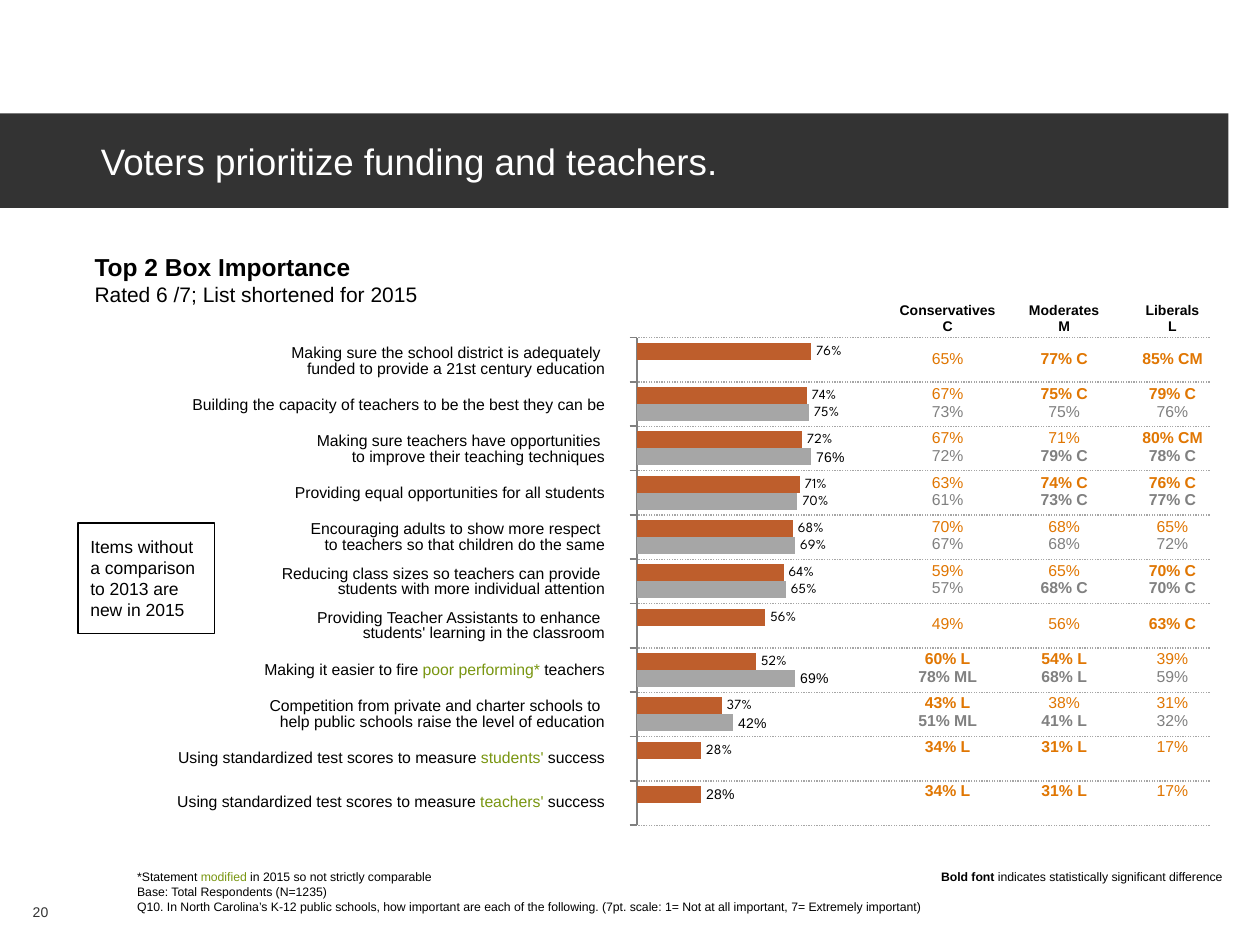
from lxml import etree
from pptx import Presentation
from pptx.chart import data as chart_data
from pptx.dml import color
from pptx.enum import chart as ch, dml, shapes, text
from pptx.oxml import parse_xml
from pptx.util import Pt

BLACK, GREEN, ORANGE, GRAY = "000000", "799611", "E07602", "808080"
LEFT, CENTER, RIGHT = text.PP_ALIGN.LEFT, text.PP_ALIGN.CENTER, text.PP_ALIGN.RIGHT
TOP, MIDDLE, BOTTOM = text.MSO_ANCHOR.TOP, text.MSO_ANCHOR.MIDDLE, text.MSO_ANCHOR.BOTTOM


def rgb(value):
    return color.RGBColor.from_string(value)


def write(paragraph, marked, size, main=BLACK, bold=False, align=LEFT, accent=GREEN):
    paragraph.alignment = align
    for part_index, part in enumerate(marked.split("|")):
        for line_index, line in enumerate(part.split("\v")):
            if line_index:
                paragraph.add_line_break()
            run = paragraph.add_run()
            run.text = line
            run.font.name = "Arial"
            run.font.size = Pt(size)
            run.font.bold = bold
            run.font.color.rgb = rgb(accent if part_index % 2 else main)


presentation = Presentation()
presentation.slide_width, presentation.slide_height = Pt(720), Pt(540)
slide = presentation.slides.add_slide(presentation.slide_layouts[5])

title = slide.shapes.title
title.left, title.top, title.width, title.height = Pt(0), Pt(64.8), Pt(702), Pt(54)
title.fill.solid()
title.fill.fore_color.rgb = rgb("333333")
frame = title.text_frame
frame.margin_left = Pt(57.6)
frame.margin_top = frame.margin_right = frame.margin_bottom = 0
frame.vertical_anchor = MIDDLE
write(frame.paragraphs[0], "Voters prioritize funding and teachers.", 21, "FFFFFF")

importance = chart_data.CategoryChartData(number_format="0%")
importance.categories = [str(number) for number in range(1, 12)]
importance.add_series("Series 1", [0.76, 0.74, 0.72, 0.71, 0.68, 0.64, 0.56, 0.52, 0.37, 0.28, 0.28])
importance.add_series("Series 2", [None, 0.75, 0.76, 0.7, 0.69, 0.65, None, 0.69, 0.42, None, None])
chart = slide.shapes.add_chart(ch.XL_CHART_TYPE.BAR_CLUSTERED, Pt(343.4), Pt(182.2),
                               Pt(356.4), Pt(306), importance).chart
chart.has_legend = False
chart.has_title = False
chart.font.name = "League Spartan"
chart.font.size = Pt(9)
chart.font.color.rgb = rgb(BLACK)

category_axis = chart.category_axis
category_axis.reverse_order = True
category_axis.tick_label_position = ch.XL_TICK_LABEL_POSITION.NONE
category_axis.major_tick_mark = ch.XL_TICK_MARK.OUTSIDE
category_axis.format.line.color.rgb = rgb(GRAY)
category_axis.format.line.width = Pt(1)
category_axis.has_major_gridlines = True
gridline = category_axis.major_gridlines.format.line
gridline.color.rgb = rgb("A6A6A6")
gridline.width = Pt(0.75)
gridline.dash_style = dml.MSO_LINE.ROUND_DOT

value_axis = chart.value_axis
value_axis.minimum_scale, value_axis.maximum_scale, value_axis.major_unit = 0, 2.5, 0.5
value_axis.has_major_gridlines = False
value_axis.visible = False

plot = chart.plots[0]
plot.gap_width = 60
plot.overlap = 0
plot.vary_by_categories = False
special_labels = [{10: "28%"}, {2: "76%", 7: "69%", 8: "42%"}]
for series, fill, specials in zip(plot.series, ("BE5E2C", "A6A6A6"), special_labels):
    series.format.fill.solid()
    series.format.fill.fore_color.rgb = rgb(fill)
    series.invert_if_negative = False
    labels = series.data_labels
    labels.show_value = True
    labels.number_format = "0%"
    labels.number_format_is_linked = False
    labels.position = ch.XL_LABEL_POSITION.OUTSIDE_END
    labels.font.size = Pt(8)
    for point, label in specials.items():
        data_label = series.points[point].data_label
        write(data_label.text_frame.paragraphs[0], label, 8)
        data_label.position = ch.XL_LABEL_POSITION.OUTSIDE_END

plot_area = chart._chartSpace.chart.plotArea
for old_layout in plot_area.xpath("c:layout"):
    plot_area.remove(old_layout)
layout = parse_xml('<c:layout xmlns:c="http://schemas.openxmlformats.org/drawingml/2006/chart"><c:manualLayout/></c:layout>')
for tag, value in (("layoutTarget", "inner"), ("xMode", "edge"), ("yMode", "edge"),
                   ("x", "0.058"), ("y", "0.035"), ("w", "0.918"), ("h", "0.911")):
    namespace = etree.QName(layout).namespace
    etree.SubElement(layout[0], f"{{{namespace}}}{tag}").set("val", value)
plot_area.insert(0, layout)

statements = [
    "Making sure the school district is adequately \vfunded to provide a 21st century education",
    "Building the capacity of teachers to be the best they can be",
    "Making sure teachers have opportunities \vto improve their teaching techniques",
    "Providing equal opportunities for all students",
    "Encouraging adults to show more respect \vto teachers so that children do the same",
    "Reducing class sizes so teachers can provide \vstudents with more individual attention",
    "Providing Teacher Assistants to enhance \vstudents' learning in the classroom",
    "Making it easier to fire |poor performing* |teachers",
    "Competition from private and charter schools to \vhelp public schools raise the level of education",
    "Using standardized test scores to measure |students'| success",
    "Using standardized test scores to measure |teachers'| success",
]
ideologies = [
    ["Conservatives\nC", "Moderates\nM", "Liberals\nL"],
    ["65%", "77% C", "85% CM"],
    ["67%\n73%", "75% C\n75%", "79% C\n76%"],
    ["67%\n72%", "71%\n79% C", "80% CM\n78% C"],
    ["63%\n61%", "74% C\n73% C", "76% C\n77% C"],
    ["70%\n67%", "68%\n68%", "65%\n72%"],
    ["59%\n57%", "65%\n68% C", "70% C\n70% C"],
    ["49%", "56%", "63% C"],
    ["60% L\n78% ML", "54% L\n68% L", "39%\n59%"],
    ["43% L\n51% ML", "38%\n41% L", "31%\n32%"],
    ["34% L", "31% L", "17%"],
    ["34% L", "31% L", "17%"],
]
tables = [
    (89.3, 193.7, [257], [25.25] * 11, [[statement] for statement in statements]),
    (506.2, 161.3, [70.6, 62.6, 61.2], [31] + [25.2] * 11, ideologies),
]
for left, top, widths, heights, rows in tables:
    graphic_frame = slide.shapes.add_table(len(rows), len(widths), Pt(left), Pt(top),
                                           Pt(sum(widths)), Pt(sum(heights)))
    graphic_frame._element.xpath(".//a:tableStyleId")[0].text = "{2D5ABB26-0587-4C30-8999-92F81FD0307C}"
    table = graphic_frame.table
    table.first_row = table.horz_banding = False
    for column, width in zip(table.columns, widths):
        column.width = Pt(width)
    for row_index, (row, height, values) in enumerate(zip(table.rows, heights, rows)):
        row.height = Pt(height)
        for cell, value in zip(row.cells, values):
            is_header = rows is ideologies and row_index == 0
            is_top = rows is ideologies and row_index >= 10
            cell.fill.background()
            cell.margin_left = cell.margin_right = Pt(0 if is_header else 0.72)
            cell.margin_top = Pt(2.7 if is_top else 0.72)
            cell.margin_bottom = Pt(1.44 if is_header else 0)
            cell.vertical_anchor = BOTTOM if is_header else TOP if is_top else MIDDLE
            lines = [value] if rows is not ideologies else value.split("\n")
            for line_index, line in enumerate(lines):
                frame = cell.text_frame
                paragraph = frame.add_paragraph() if line_index else frame.paragraphs[0]
                if rows is not ideologies:
                    write(paragraph, line, 9, align=RIGHT)
                    paragraph.line_spacing = Pt(9)
                elif is_header:
                    write(paragraph, line, 8, bold=True, align=CENTER)
                else:
                    write(paragraph, line, 9, (ORANGE, GRAY)[line_index], not line.endswith("%"), CENTER)

question = ("Q10. In North Carolina’s K-12 public schools, how important are each of the following. "
            "(7pt. scale: 1= Not at all important, 7= Extremely important)")
text_boxes = [
    (18.7, 516.2, 126, 9.4, 0, 0, TOP, LEFT, [("20", 8, "333333", False)]),
    (71.3, 493.2, 630, 32.4, 7.2, 3.6, BOTTOM, LEFT,
     [("*Statement |modified |in 2015 so not strictly comparable", 7, BLACK, False),
      ("Base: Total Respondents (N=1235)", 7, BLACK, False), (question, 7, BLACK, False)]),
    (54, 144, 229, 31.7, 0, 0, TOP, LEFT,
     [("Top 2 Box Importance", 14, BLACK, True),
      ("Rated 6 /7; List shortened for 2015", 12, BLACK, False)]),
    (509.8, 493, 195.8, 15.8, 7.2, 3.6, TOP, RIGHT,
     [("Bold font| indicates statistically significant difference", 7, BLACK, False)]),
    (44.6, 298.8, 78, 63.4, 7.2, 7.2, MIDDLE, LEFT,
     [("Items without a comparison to 2013 are new in 2015", 10, BLACK, False)]),
]
for left, top, width, height, side, edge, anchor, align, lines in text_boxes:
    box = (Pt(left), Pt(top), Pt(width), Pt(height))
    if lines[0][0].startswith("Items"):
        shape = slide.shapes.add_shape(shapes.MSO_SHAPE.RECTANGLE, *box)
        shape.shadow.inherit = False
        shape.fill.background()
        shape.line.color.rgb = rgb(BLACK)
        shape.line.width = Pt(0.75)
    else:
        shape = slide.shapes.add_textbox(*box)
    frame = shape.text_frame
    frame.word_wrap = True
    frame.margin_left = frame.margin_right = Pt(side)
    frame.margin_top = frame.margin_bottom = Pt(edge)
    frame.vertical_anchor = anchor
    for line_index, (line, size, main, bold) in enumerate(lines):
        paragraph = frame.add_paragraph() if line_index else frame.paragraphs[0]
        write(paragraph, line, size, main, bold, align, BLACK if align == RIGHT else GREEN)
        if align == RIGHT:
            paragraph.runs[0].font.bold = True

presentation.save("out.pptx")
